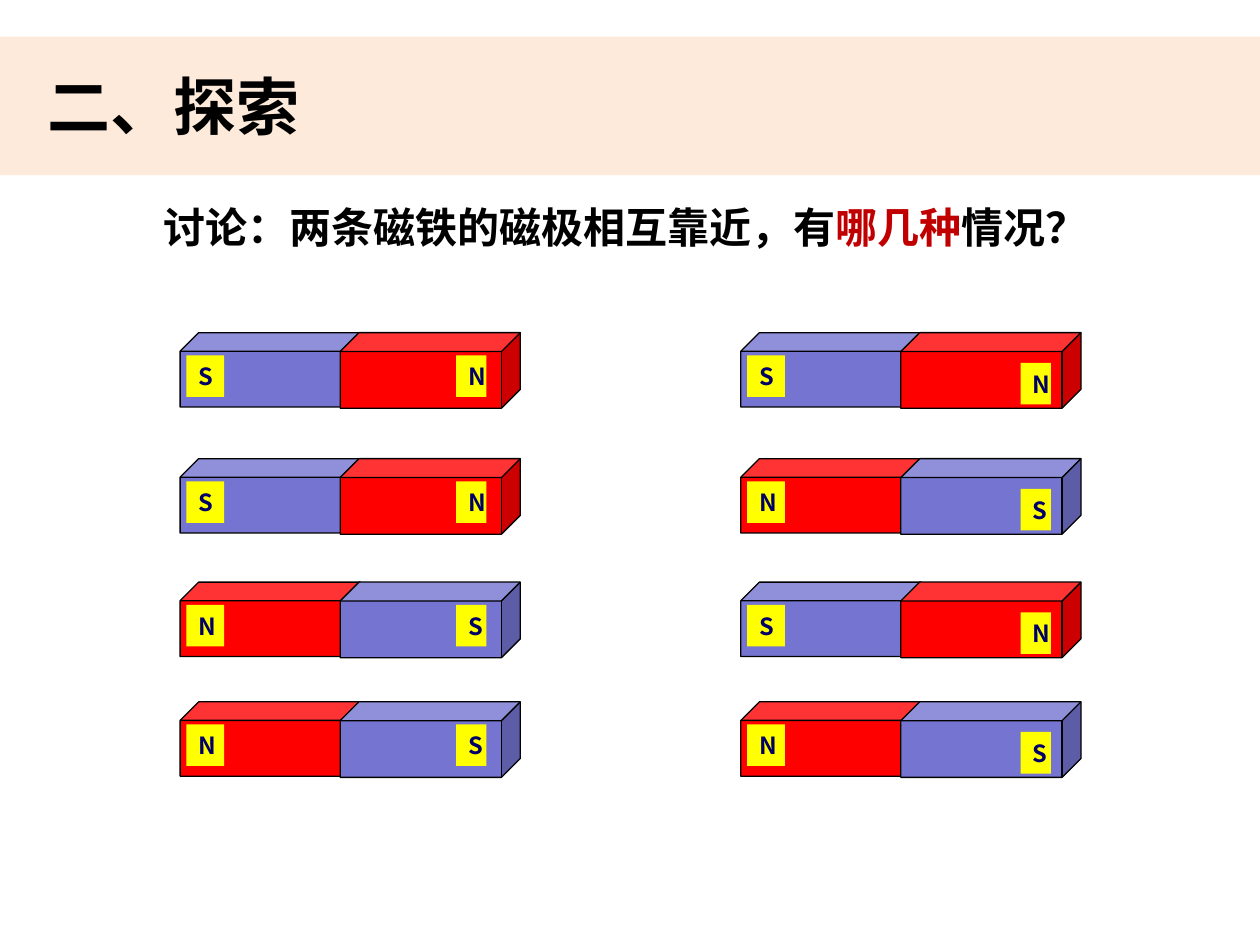
import pptx
import pptx.util
import pptx.dml.color
import pptx.enum.shapes
import pptx.enum.text
import pptx.oxml.ns
import lxml.etree

TITLE = "二、探索"
QUESTION = [("讨论：两条磁铁的磁极相互靠近，有", "text"), ("哪几种", "accent"), ("情况？", "text")]
MAGNET_ROWS = [("SN", "SN"), ("SN", "NS"), ("NS", "SN"), ("NS", "NS")]

THEME = {
    "font": "Noto Sans CJK SC",
    "colors": {"text": "000000", "accent": "C00000", "band": "FDEADA", "label": "FFFF00",
               "pole": "000066", "S": "7575D1", "N": "FF0000"},
    "sizes": {"title": 36, "question": 24, "pole": 13.5},
}
ROW_TOPS = [2.64, 3.64, 4.62, 5.57]
COLUMN_LEFTS = [1.43, 5.88]
LABEL_DROPS = [(0.18, 0.18), (0.18, 0.24)]
HALF_STEP, HALF_WIDTH, HALF_HEIGHTS = 1.27, 1.43, (0.59, 0.6)
LABEL_HEIGHT = 0.33
LABEL_OFFSETS, LABEL_WIDTHS = [(0.05, 2.19), (0.05, 2.22)], (0.3, 0.24)

SHAPE = pptx.enum.shapes.MSO_SHAPE
Inches = pptx.util.Inches
qn = pptx.oxml.ns.qn


def color(name):
    return pptx.dml.color.RGBColor.from_string(THEME["colors"][name])


def add_shape(s, kind, box, fill, line=None):
    sp = s.shapes.add_shape(kind, *map(Inches, box))
    sp.shadow.inherit = False
    sp.fill.solid()
    sp.fill.fore_color.rgb = color(fill)
    if line:
        sp.line.color.rgb = color(line)
        sp.line.width = pptx.util.Pt(0.75)
    else:
        sp.line.fill.background()
    return sp


def write(sp, runs, size, insets=(0.1, 0.05, 0.1, 0.05)):
    tf = sp.text_frame
    tf.word_wrap = True
    tf.auto_size = pptx.enum.text.MSO_AUTO_SIZE.NONE
    tf.vertical_anchor = pptx.enum.text.MSO_ANCHOR.MIDDLE
    tf.margin_left, tf.margin_top, tf.margin_right, tf.margin_bottom = map(Inches, insets)
    p = tf.paragraphs[0]
    p.alignment = pptx.enum.text.PP_ALIGN.LEFT
    p.font.name = THEME["font"]
    p.font.size = pptx.util.Pt(THEME["sizes"][size])
    p.font.bold = True
    for text, name in runs:
        r = p.add_run()
        r.text = text
        r.font.color.rgb = color(name)
    for latin in list(sp.element.iter(qn("a:latin"))):
        ea = lxml.etree.Element(qn("a:ea"), typeface=THEME["font"])
        latin.addnext(ea)


def add_magnet(s, left, top, poles, offsets, drops):
    for i, pole in enumerate(poles):
        box = (left + i * HALF_STEP, top, HALF_WIDTH, HALF_HEIGHTS[i])
        add_shape(s, SHAPE.CUBE, box, pole, "text")
    for pole, offset, drop, width in zip(poles, offsets, drops, LABEL_WIDTHS):
        sp = add_shape(s, SHAPE.RECTANGLE, (left + offset, top + drop, width, LABEL_HEIGHT), "label")
        write(sp, [(pole, "pole")], "pole", (0.1, 0, 0, 0))


def main():
    prs = pptx.Presentation()
    prs.slide_width, prs.slide_height = Inches(10), Inches(7.5)
    s = prs.slides.add_slide(prs.slide_layouts[5])

    title = s.shapes.title
    title.left, title.top, title.width, title.height = map(Inches, (0.28, 0.48, 10, 0.71))
    write(title, [(TITLE, "text")], "title")
    band = add_shape(s, SHAPE.RECTANGLE, (0, 0.29, 10, 1.1), "band")
    title.element.addprevious(band.element)

    for top, row in zip(ROW_TOPS, MAGNET_ROWS):
        for left, poles, offsets, drops in zip(COLUMN_LEFTS, row, LABEL_OFFSETS, LABEL_DROPS):
            add_magnet(s, left, top, poles, offsets, drops)

    question = s.shapes.add_textbox(*map(Inches, (1.2, 1.55, 7.37, 0.5)))
    write(question, QUESTION, "question")
    prs.save("out.pptx")


if __name__ == "__main__":
    main()
